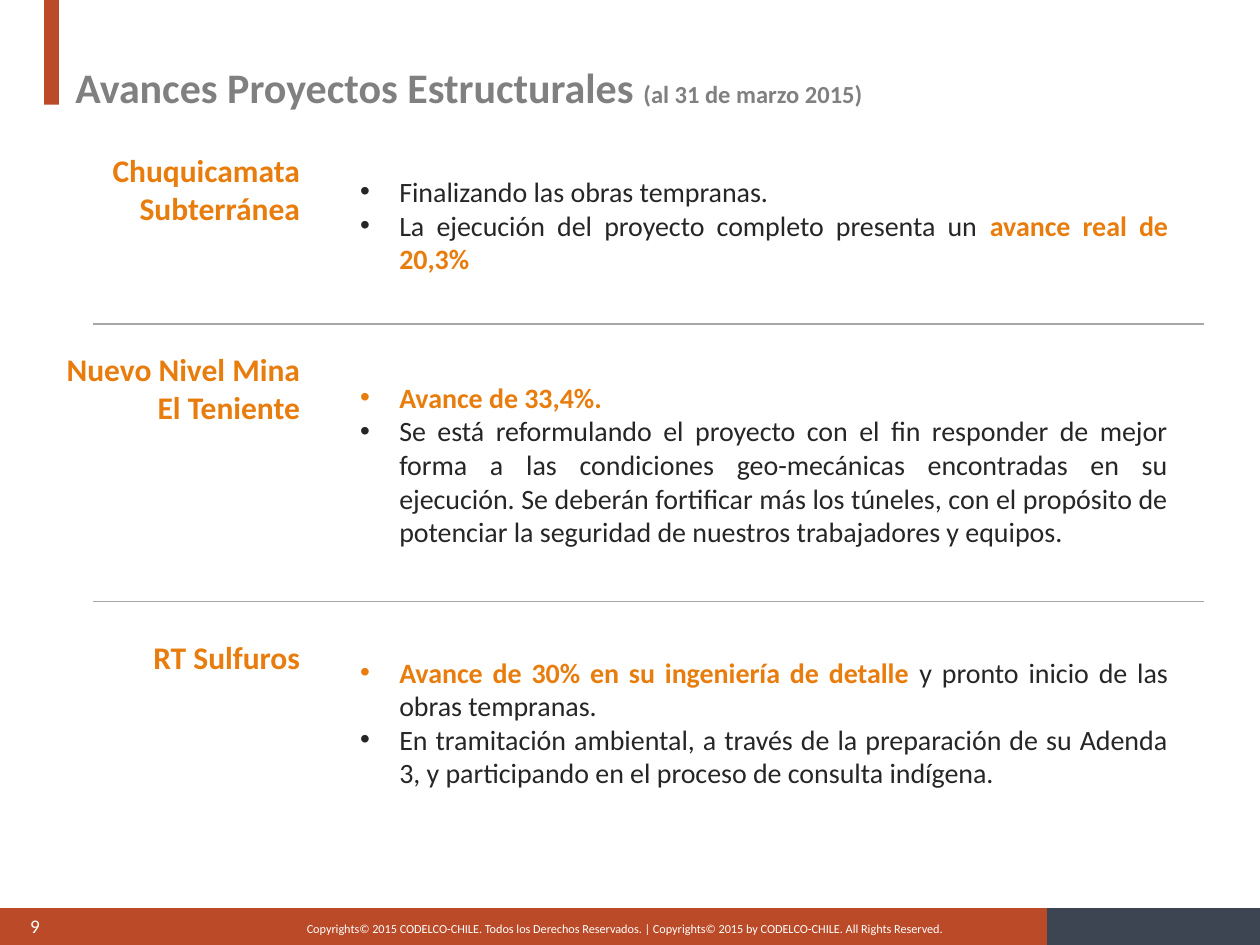
from dataclasses import dataclass
from lxml import etree
from pptx import Presentation
from pptx import util as u
from pptx.dml.color import RGBColor
from pptx.enum import shapes, text
from pptx.oxml.ns import qn

ALIGN = text.PP_ALIGN
ANCHOR = text.MSO_ANCHOR


@dataclass(frozen=True)
class Theme:
    font: str = "Calibri"
    rust: str = "BA4A28"
    slate: str = "3D4552"
    gray: str = "808080"
    rule: str = "A6A6A6"
    accent: str = "E87D0D"
    ink: str = "262626"
    white: str = "FFFFFF"
    title: int = 24
    date: int = 14
    head: int = 18
    body: int = 16
    page: int = 11
    legal: int = 7


T = Theme()


@dataclass(frozen=True)
class Box:
    left: float
    top: float
    width: float
    height: float

    def args(self) -> list:
        return [u.Cm(v) for v in (self.left, self.top, self.width, self.height)]


@dataclass(frozen=True)
class Run:
    words: str
    size: int = T.body
    color: str = T.ink
    bold: bool = False


@dataclass(frozen=True)
class Project:
    name: str
    top: float
    tall: float
    start: float
    depth: float
    points: list[list[Run]]


def strong(words: str) -> Run:
    return Run(words, color=T.accent, bold=True)


PROJECTS = [
    Project("Chuquicamata Subterránea", 2.92, 1.8, 3.38, 2.31, [
        [Run("Finalizando las obras tempranas.")],
        [Run("La ejecución del proyecto completo presenta un "),
         strong("avance real de 20,3%")],
    ]),
    Project("Nuevo Nivel Mina El Teniente", 6.93, 1.8, 7.52, 3.68, [
        [strong("Avance de 33,4%.")],
        [Run("Se está reformulando el proyecto con el fin responder de mejor "
             "forma a las condiciones geo-mecánicas encontradas en su ejecución. "
             "Se deberán fortificar más los túneles, con el propósito de "
             "potenciar la seguridad de nuestros trabajadores y equipos.")],
    ]),
    Project("RT Sulfuros", 12.73, 1.02, 13.06, 3.0, [
        [strong("Avance de 30% en su ingeniería de detalle "),
         Run("y pronto inicio de las obras tempranas.")],
        [Run("En tramitación ambiental, a través de la preparación de su "
             "Adenda 3, y participando en el proceso de consulta indígena.")],
    ]),
]
BARS = [
    (Box(0, 18.31, 21.11, 0.74), T.rust),
    (Box(0.89, 0, 0.3, 2.11), T.rust),
    (Box(21.11, 18.31, 4.29, 0.74), T.slate),
]
RULES = [6.53, 12.12]


def add_bar(slide, box: Box, color: str) -> None:
    bar = slide.shapes.add_shape(shapes.MSO_SHAPE.RECTANGLE, *box.args())
    bar.shadow.inherit = False
    bar.fill.solid()
    bar.fill.fore_color.rgb = RGBColor.from_string(color)
    bar.line.fill.background()


def add_rule(slide, top: float) -> None:
    rule = slide.shapes.add_connector(
        shapes.MSO_CONNECTOR.STRAIGHT,
        u.Cm(1.88), u.Cm(top), u.Cm(24.28), u.Cm(top))
    rule.line.color.rgb = RGBColor.from_string(T.rule)
    rule.line.width = u.Pt(0.75)
    etree.SubElement(rule._element.spPr, qn("a:effectLst"))


def add_bullet(para) -> None:
    props = para._p.get_or_add_pPr()
    props.set("marL", str(u.Cm(0.79)))
    props.set("indent", str(u.Cm(-0.79)))
    etree.SubElement(props, qn("a:buFont"), typeface="Arial")
    etree.SubElement(props, qn("a:buChar"), char="•")


def add_text(slide, box: Box, paras: list[list[Run]], align=ALIGN.LEFT,
             anchor=ANCHOR.TOP, bullet: bool = False) -> None:
    frame = slide.shapes.add_textbox(*box.args()).text_frame
    frame.word_wrap = True
    frame.vertical_anchor = anchor
    for i, runs in enumerate(paras):
        para = frame.add_paragraph() if i else frame.paragraphs[0]
        para.alignment = align
        if bullet:
            add_bullet(para)
        for item in runs:
            run = para.add_run()
            run.text = item.words
            run.font.name = T.font
            run.font.size = u.Pt(item.size)
            run.font.bold = item.bold
            run.font.color.rgb = RGBColor.from_string(item.color)


def add_project(slide, item: Project) -> None:
    add_text(slide, Box(0.5, item.top, 5.8, item.tall),
             [[Run(item.name, T.head, T.accent, True)]], ALIGN.RIGHT)
    add_text(slide, Box(7.01, item.start, 16.79, item.depth),
             item.points, ALIGN.JUSTIFY, ANCHOR.MIDDLE, True)


def main() -> None:
    deck = Presentation()
    deck.slide_width, deck.slide_height = u.Cm(25.4), u.Cm(19.05)
    slide = deck.slides.add_slide(deck.slide_layouts[6])
    for box, color in BARS:
        add_bar(slide, box, color)
    add_text(slide, Box(4.9, 18.44, 15.39, 0.48), [[Run(
        "Copyrights© 2015 CODELCO-CHILE. Todos los Derechos Reservados. | "
        "Copyrights© 2015 by CODELCO-CHILE. All Rights Reserved.",
        T.legal, T.white)]], ALIGN.CENTER)
    add_text(slide, Box(1.27, 0.76, 22.86, 1.96), [[
        Run("Avances Proyectos Estructurales ", T.title, T.gray, True),
        Run("(al 31 de marzo 2015)", T.date, T.gray, True),
    ]], anchor=ANCHOR.MIDDLE)
    add_text(slide, Box(0.36, 18.16, 3.73, 1.02),
             [[Run("9", T.page, T.white)]], anchor=ANCHOR.MIDDLE)
    for item in PROJECTS:
        add_project(slide, item)
    for top in RULES:
        add_rule(slide, top)
    deck.save("out.pptx")


if __name__ == "__main__":
    main()
